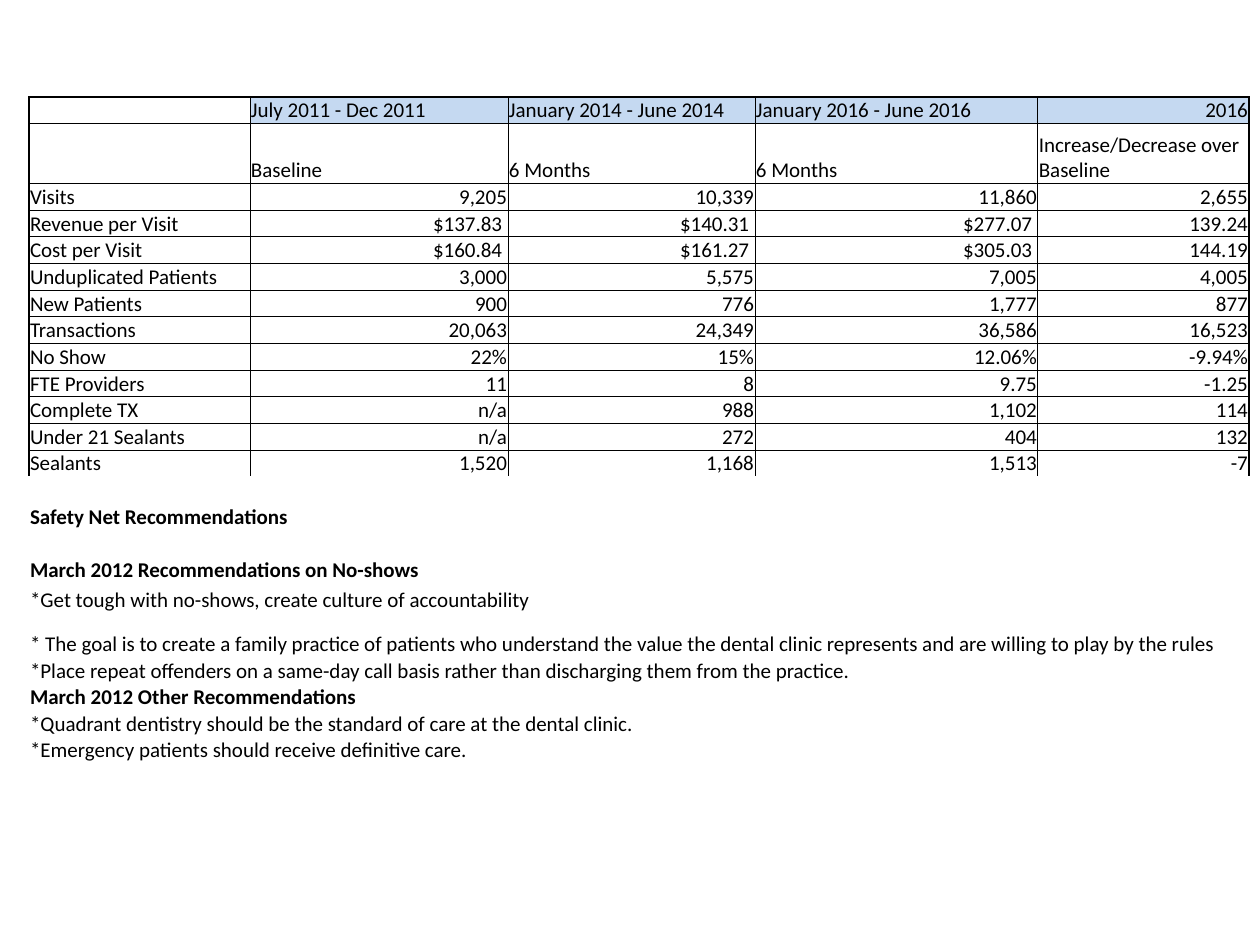
from dataclasses import dataclass

from lxml import etree
from pptx import Presentation
from pptx import util as u
from pptx.dml.color import RGBColor
from pptx.enum import text
from pptx.oxml.ns import qn

PX = 914400 // 126
BLACK = RGBColor(0x00, 0x00, 0x00)
BLUE = RGBColor(0xC5, 0xD9, 0xF1)
LEFT, TOP = 29, 97
COLS = [221, 258, 247, 283, 211]
ROW = 26
THIN, THICK = u.Pt(0.5), u.Pt(1)

HEADS = [
    ["", "July 2011 - Dec 2011", "January 2014 - June 2014",
     "January 2016 - June 2016", "2016"],
    ["", "Baseline", "6 Months", "6 Months", "Increase/Decrease over Baseline"],
]
STATS = [
    ["Visits", "9,205", "10,339", "11,860", "2,655"],
    ["Revenue per Visit", "$137.83 ", "$140.31 ", "$277.07 ", "139.24"],
    ["Cost per Visit", "$160.84 ", "$161.27 ", "$305.03 ", "144.19"],
    ["Unduplicated Patients", "3,000", "5,575", "7,005", "4,005"],
    ["New Patients", "900", "776", "1,777", "877"],
    ["Transactions", "20,063", "24,349", "36,586", "16,523"],
    ["No Show", "22%", "15%", "12.06%", "-9.94%"],
    ["FTE Providers", "11", "8", "9.75", "-1.25"],
    ["Complete TX", "n/a", "988", "1,102", "114"],
    ["Under 21 Sealants", "n/a", "272", "404", "132"],
    ["Sealants", "1,520", "1,168", "1,513", "-7"],
]


@dataclass
class Note:
    words: str = ""
    span: int = 1
    bold: bool = False
    height: int = ROW


NOTES = [
    Note(),
    Note("Safety Net Recommendations", 2, True),
    Note(),
    Note("March 2012 Recommendations on No-shows", 2, True),
    Note("*Get tough with no-shows, create culture of accountability", 3, height=30),
    Note("* The goal is to create a family practice of patients who understand the "
         "value the dental clinic represents and are willing to play by the rules",
         5, height=44),
    Note("*Place repeat offenders on a same-day call basis rather than discharging "
         "them from the practice.", 4),
    Note("March 2012 Other Recommendations", 2, True),
    Note("*Quadrant dentistry should be the standard of care at the dental clinic.", 3),
    Note("*Emergency patients should receive definitive care.", 3),
]


def write(cell, words: str, bold: bool = False, right: bool = False) -> None:
    cell.margin_left = cell.margin_right = cell.margin_top = PX
    cell.margin_bottom = 0
    cell.vertical_anchor = text.MSO_ANCHOR.BOTTOM
    cell.text = words
    para = cell.text_frame.paragraphs[0]
    para.alignment = text.PP_ALIGN.RIGHT if right else text.PP_ALIGN.LEFT
    font = para.font
    font.name, font.size, font.bold = "Calibri", u.Pt(12), bold
    font.color.rgb = BLACK
    if not words:
        # An empty cell keeps its row low only if its end mark is small too.
        etree.SubElement(para._p, qn("a:endParaRPr"), sz="1200")


def rule(cell, row: int, col: int) -> None:
    """Thin lines inside the figures, thick ones around them."""
    last = len(HEADS) + len(STATS) - 1
    edges = {"L": col == 0, "R": col == len(COLS) - 1,
             "T": row == 0, "B": row == last}
    props = cell._tc.get_or_add_tcPr()
    for side, outer in edges.items():
        line = etree.SubElement(props, qn(f"a:ln{side}"),
                                w=str(THICK if outer else THIN))
        fill = etree.SubElement(line, qn("a:solidFill"))
        etree.SubElement(fill, qn("a:srgbClr"), val=str(BLACK))


def fill_stats(table) -> None:
    for row, line in enumerate(HEADS + STATS):
        for col, words in enumerate(line):
            cell = table.cell(row, col)
            right = col > 0 and row >= len(HEADS) or words == "2016"
            write(cell, words, right=right)
            rule(cell, row, col)
            if row == 0 and col > 0:
                cell.fill.solid()
                cell.fill.fore_color.rgb = BLUE
            else:
                cell.fill.background()


def fill_notes(table) -> None:
    for row, note in enumerate(NOTES, len(HEADS) + len(STATS)):
        for col in range(len(COLS)):
            cell = table.cell(row, col)
            write(cell, "" if col else note.words, note.bold)
            cell.fill.background()
        if note.span > 1:
            table.cell(row, 0).merge(table.cell(row, note.span - 1))


def main() -> None:
    deck = Presentation()
    deck.slide_width, deck.slide_height = u.Inches(10), u.Inches(7.5)
    slide = deck.slides.add_slide(deck.slide_layouts[6])
    rows = [ROW, 60] + [ROW] * len(STATS) + [note.height for note in NOTES]
    table = slide.shapes.add_table(len(rows), len(COLS), LEFT * PX, TOP * PX,
                                   sum(COLS) * PX, sum(rows) * PX).table
    table.first_row = table.horz_banding = False
    for col, width in zip(table.columns, COLS):
        col.width = width * PX
    for row, height in zip(table.rows, rows):
        row.height = height * PX
    fill_stats(table)
    fill_notes(table)
    deck.save("out.pptx")


if __name__ == "__main__":
    main()
